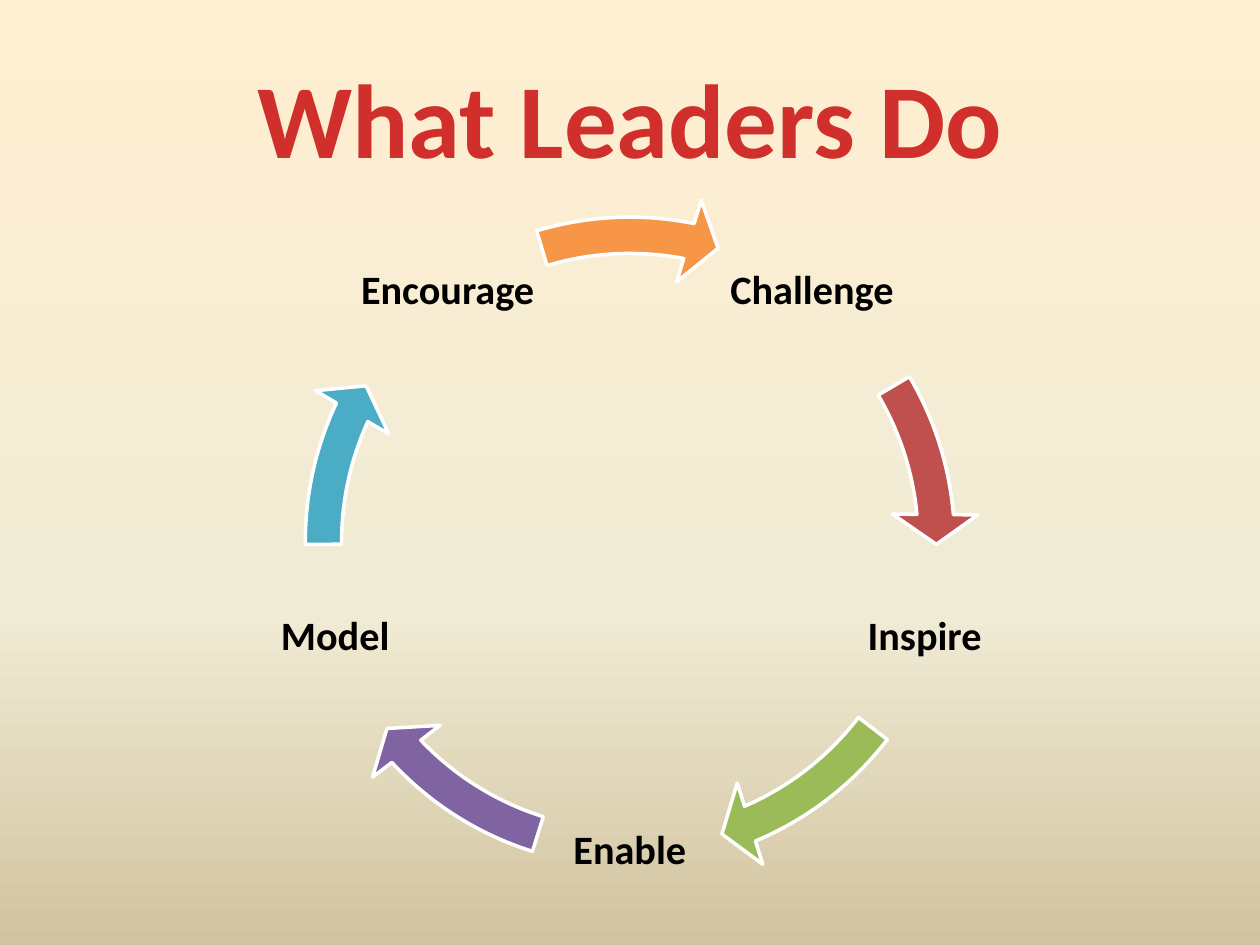
from copy import deepcopy
from dataclasses import dataclass
from math import cos, radians, sin

from pptx import Presentation
from pptx.dml.color import RGBColor as RGB
from pptx.enum.shapes import MSO_SHAPE as Preset
from pptx.enum.text import MSO_ANCHOR as Anchor, PP_ALIGN as Align
from pptx.oxml.ns import qn
from pptx.util import Pt


@dataclass(frozen=True)
class Theme:
    font: str = "Calibri"
    title_size: float = 60
    label_size: float = 23
    title: str = "D02F2C"
    label: str = "000000"
    outline: str = "FFFFFF"
    background: tuple = ((0, "FFEFD1"), (0.65, "F0EBD5"), (1, "D1C39F"))


@dataclass(frozen=True)
class Step:
    label: str
    color: str
    start: float  # arrow tail, degrees clockwise from the right
    end: float  # arrow head


THEME = Theme()
STEPS = (
    Step("Challenge", "C0504D", 329.43, 354.9),
    Step("Inspire", "9BBB59", 37.55, 66.93),
    Step("Enable", "8064A2", 107.48, 136.86),
    Step("Model", "4BACC6", 179.51, 204.98),
    Step("Encourage", "F79646", 253.3, 281.11),
)

# Cycle geometry, in points
CENTER_X, CENTER_Y = 360, 309.6
LABEL_RADIUS, LABEL_SIDE = 177.1, 106.6
ARROW_SIDE = 398.9
FIRST_ANGLE = -54
ARROW_THICKNESS, HEAD_WIDTH, HEAD_ANGLE = 0.052, 0.061, 5.6
ADJUSTMENT_PER_DEGREE = 0.6  # 60000 units a degree, scaled by 100000


def paint_background(slide) -> None:
    fill = slide.background.fill
    fill.gradient()
    fill.gradient_angle = 270
    stop_list = slide.element.find(".//" + qn("a:gsLst"))
    stop_list.append(deepcopy(stop_list[-1]))
    for stop, (position, color) in zip(fill.gradient_stops, THEME.background):
        stop.position = position
        stop.color.rgb = RGB.from_string(color)


def add_text(slide, text: str, *, left: float, top: float, width: float,
             height: float, size: float, color: str, inset: float,
             line_spacing: float = 1.0) -> None:
    box = slide.shapes.add_textbox(Pt(left), Pt(top), Pt(width), Pt(height))
    frame = box.text_frame
    frame.word_wrap = True
    frame.vertical_anchor = Anchor.MIDDLE
    frame.margin_left = frame.margin_right = Pt(inset)
    frame.margin_top = frame.margin_bottom = Pt(min(inset, 3.6))
    paragraph = frame.paragraphs[0]
    paragraph.alignment = Align.CENTER
    paragraph.line_spacing = line_spacing
    run = paragraph.add_run()
    run.text = text
    run.font.name = THEME.font
    run.font.size = Pt(size)
    run.font.bold = True
    run.font.color.rgb = RGB.from_string(color)


def add_label(slide, step: Step, angle: float) -> None:
    x = CENTER_X + LABEL_RADIUS * cos(radians(angle))
    y = CENTER_Y + LABEL_RADIUS * sin(radians(angle))
    add_text(slide, step.label, left=x - LABEL_SIDE / 2, top=y - LABEL_SIDE / 2,
             width=LABEL_SIDE, height=LABEL_SIDE, size=THEME.label_size,
             color=THEME.label, inset=2.3, line_spacing=0.9)


def add_arrow(slide, step: Step) -> None:
    arrow = slide.shapes.add_shape(
        Preset.CIRCULAR_ARROW, Pt(CENTER_X - ARROW_SIDE / 2),
        Pt(CENTER_Y - ARROW_SIDE / 2), Pt(ARROW_SIDE), Pt(ARROW_SIDE))
    angles = [angle * ADJUSTMENT_PER_DEGREE
              for angle in (HEAD_ANGLE, step.end, step.start)]
    for index, value in enumerate([ARROW_THICKNESS, *angles, HEAD_WIDTH]):
        arrow.adjustments[index] = value
    arrow.shadow.inherit = False
    arrow.fill.solid()
    arrow.fill.fore_color.rgb = RGB.from_string(step.color)
    arrow.line.color.rgb = RGB.from_string(THEME.outline)
    arrow.line.width = Pt(2)


def main() -> None:
    presentation = Presentation()
    presentation.slide_width, presentation.slide_height = Pt(720), Pt(540)
    slide = presentation.slides.add_slide(presentation.slide_layouts[6])
    paint_background(slide)

    # Title
    add_text(slide, "What Leaders Do", left=36, top=21.6, width=648, height=90,
             size=THEME.title_size, color=THEME.title, inset=7.2)

    # Cycle: each label is followed by the arrow to the next one
    for index, step in enumerate(STEPS):
        add_label(slide, step, FIRST_ANGLE + index * 360 / len(STEPS))
        add_arrow(slide, step)

    presentation.save("out.pptx")


if __name__ == "__main__":
    main()
